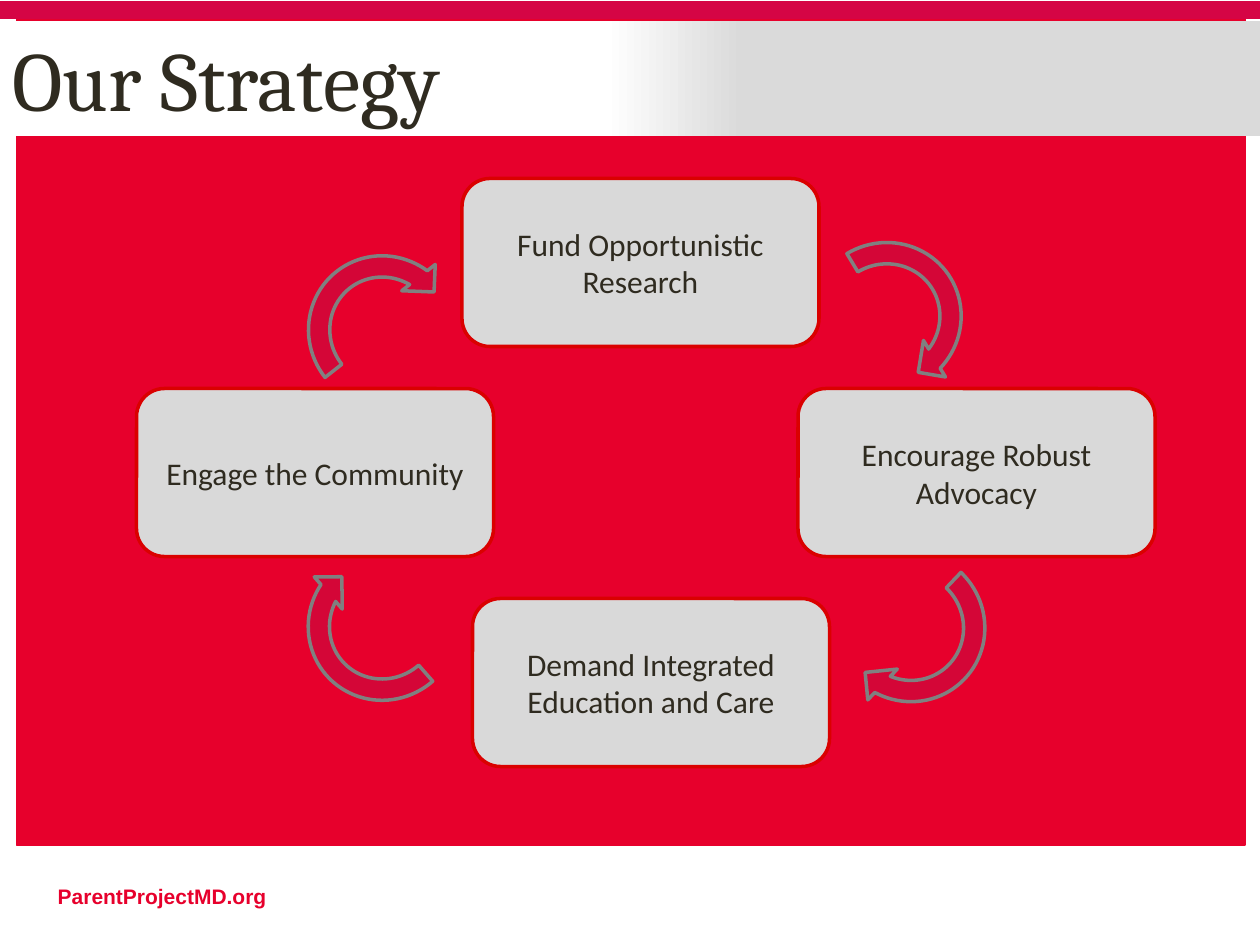
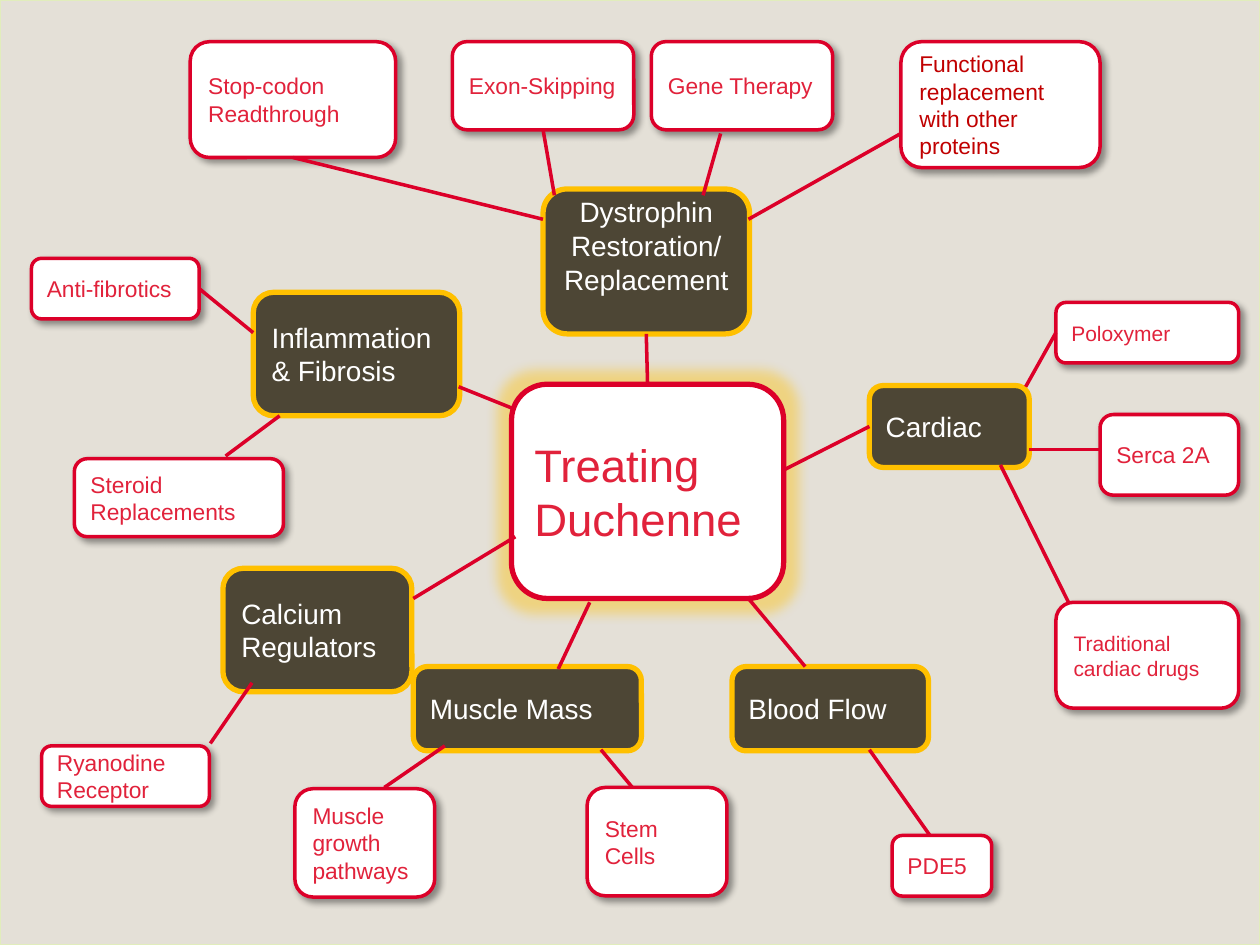
from dataclasses import dataclass

from lxml import etree
from pptx import Presentation
from pptx.dml.color import RGBColor
from pptx.enum.shapes import MSO_CONNECTOR, MSO_SHAPE
from pptx.enum.text import MSO_ANCHOR, PP_ALIGN
from pptx.oxml.ns import qn
from pptx.util import Pt

RECT = MSO_SHAPE.RECTANGLE
CARD = MSO_SHAPE.ROUNDED_RECTANGLE
NODE = MSO_SHAPE.FLOWCHART_ALTERNATE_PROCESS
ARROW = MSO_SHAPE.CIRCULAR_ARROW
STRAIGHT = MSO_CONNECTOR.STRAIGHT
TOP, MIDDLE = MSO_ANCHOR.TOP, MSO_ANCHOR.MIDDLE
LEFT, CENTER = PP_ALIGN.LEFT, PP_ALIGN.CENTER
SIDE_TOP, SIDE_LEFT, SIDE_BOTTOM, SIDE_RIGHT = range(4)


@dataclass(frozen=True)
class Theme:
    white: str = "FFFFFF"
    ink: str = "2F2B20"
    red: str = "E7002C"
    stripe: str = "D50545"
    band_end: str = "DADADA"
    card: str = "D9D9D9"
    card_line: str = "DA0000"
    arrow: str = "D40637"
    arrow_line: str = "808080"
    sand: str = "E4E0D7"
    sand_line: str = "E1EDBC"
    crimson: str = "DC0029"
    leaf_text: str = "E1223B"
    deep_red: str = "C00000"
    bark: str = "4D4635"
    gold: str = "FFC000"
    black: str = "000000"
    title_font: str = "Cambria"
    card_font: str = "Calibri"
    body_font: str = "Arial"
    title_size: int = 48
    hub_size: int = 26
    card_size: int = 18
    branch_size: int = 16
    leaf_size: int = 13
    small_size: int = 12


T = Theme()
SLIDE_BOX = (0, 0, 720, 540)

CARD_SIZE = (204, 96)
CARDS = [
    ("Fund Opportunistic Research", 186, 0),
    ("Encourage Robust Advocacy", 378, 120),
    ("Demand Integrated Education and Care", 192, 240),
    ("Engage the Community", 0, 120),
]
ARROW_SIZE = (97.4, 99.4)
ARROWS = [  # left, top, rotation
    (92.6, 37.7, 321.9),
    (92.6, 205.4, 229),
    (379.2, 29.8, 59),
    (392.9, 206.2, 133.8),
]

HUB = ("Treating Duchenne", 292.3, 219.6, 155.5, 122.4)
DYSTROPHIN = "Dystrophin Restoration/Replacement"
BRANCHES = [
    (DYSTROPHIN, 310.3, 108, 118, 82.8),
    ("Inflammation\v& Fibrosis", 144.7, 167, 118, 70.6),
    ("Cardiac", 496.8, 220.3, 91.4, 46.8),
    ("Muscle Mass", 236.2, 380.9, 130.3, 48.2),
    ("Blood Flow", 418.3, 380.9, 112.3, 48.2),
    ("Calcium Regulators", 127.4, 324.7, 108, 70.6),
]
FUNCTIONAL = "Functional replacement with other proteins"
LEAVES = [
    ("Stop-codon Readthrough", 108.7, 23.8, 117.4, 66.2),
    ("Exon-Skipping", 258.5, 23.8, 103.7, 50.4),
    ("Gene Therapy", 372.2, 23.8, 103.7, 50.4),
    (FUNCTIONAL, 514.8, 23.8, 113.8, 72),
    ("Poloxymer", 603.4, 172.8, 104.4, 34.6),
    ("Serca 2A", 628.6, 236.9, 79.2, 46.1),
    ("Traditional cardiac drugs", 603.4, 344.2, 104.4, 60.5),
    ("PDE5", 509.8, 477.4, 56.9, 34.6),
    ("Muscle growth pathways", 168.5, 450.7, 79.9, 61.9),
    ("Stem Cells", 335.5, 450, 79.9, 61.9),
    ("Anti-fibrotics", 18, 147.6, 95.8, 34.6),
    ("Steroid Replacements", 42.5, 262.1, 119.5, 44.6),
    ("Ryanodine Receptor", 23.8, 426.2, 95.8, 34.6),
]
SMALL_LEAVES = {"Poloxymer", "Traditional cardiac drugs"}
LINKS = [  # each end is a point, or a node and one of its sides
    ((DYSTROPHIN, SIDE_BOTTOM), (HUB[0], SIDE_TOP)),
    (("Cardiac", SIDE_LEFT), (447.8, 268.6)),
    ((427.7, 342), (460.1, 380.9)),
    ((337, 344.2), (319, 382.3)),
    ((294.5, 234), (262.1, 221)),
    ((294.5, 306.7), (236.2, 342)),
    (("Anti-fibrotics", SIDE_RIGHT), (144.7, 190.1)),
    (("Stop-codon Readthrough", SIDE_BOTTOM), (310.3, 125.3)),
    (("Exon-Skipping", SIDE_BOTTOM), (316.8, 111.6)),
    ((411.8, 76.3), (401.8, 111.6)),
    ((514.8, 76.3), (427.7, 125.3)),
    (("Poloxymer", SIDE_LEFT), (586.1, 221)),
    ((628.6, 257), (588.2, 257)),
    ((610.6, 344.2), (571.7, 265.7)),
    ((531.4, 477.4), (496.8, 428.4)),
    ((128.9, 260.6), (159.8, 237.6)),
    ((361.4, 450), (343.4, 428.4)),
    ((219.6, 450), (254.2, 426.2)),
    ((120.2, 424.8), (144, 390.2)),
]


def rgb(color):
    return RGBColor.from_string(color)


def set_background(s, color):
    fill = s.background.fill
    fill.solid()
    fill.fore_color.rgb = rgb(color)


def add_box(s, kind, box, fill=None, line=None, width=1):
    sp = s.shapes.add_shape(kind, *(Pt(v) for v in box))
    sp.shadow.inherit = False
    if fill:
        sp.fill.solid()
        sp.fill.fore_color.rgb = rgb(fill)
    if line:
        sp.line.color.rgb = rgb(line)
        sp.line.width = Pt(width)
    else:
        sp.line.fill.background()
    return sp


def write(sp, text, font, size, color, align=LEFT, anchor=MIDDLE, bold=False):
    tf = sp.text_frame
    tf.word_wrap = True
    tf.vertical_anchor = anchor
    tf.text = text
    p = tf.paragraphs[0]
    p.alignment = align
    for r in p.runs:
        r.font.name, r.font.size, r.font.bold = font, Pt(size), bold
        r.font.color.rgb = rgb(color)


def add_effect(sp, tag, color, alpha, **attrs):
    """Put one effect, such as a:glow, in the shape's empty effect list."""
    effects = sp._element.spPr.find(qn("a:effectLst"))
    effect = etree.SubElement(effects, qn(tag), {k: str(v) for k, v in attrs.items()})
    clr = etree.SubElement(effect, qn("a:srgbClr"), val=color)
    etree.SubElement(clr, qn("a:alpha"), val=str(alpha * 1000))


def add_line(s, start, end, color, width):
    cx = s.shapes.add_connector(STRAIGHT, *(Pt(v) for v in (*start, *end)))
    cx.line.color.rgb = rgb(color)
    cx.line.width = Pt(width)
    etree.SubElement(cx._element.spPr, qn("a:effectLst"))
    return cx


def add_title_band(s, box, title):
    x, y, w, h = box
    add_line(s, (x, y + 5.8), (x + w, y + 5.8), T.stripe, 10)
    sp = add_box(s, RECT, (x, y + 12, w, h - 12))
    sp.fill.gradient()
    sp.fill.gradient_angle = 0
    for stop, color, position in zip(sp.fill.gradient_stops,
                                     (T.white, T.band_end), (0.48, 0.59)):
        stop.color.rgb = rgb(color)
        stop.position = position
    write(sp, title, T.title_font, T.title_size, T.ink, anchor=TOP)


def add_footer(s, box, text):
    sp = s.shapes.add_textbox(*(Pt(v) for v in box))
    write(sp, text, T.body_font, T.small_size, T.red, anchor=TOP, bold=True)


def add_cycle(s, box):
    x, y = box[:2]
    for text, dx, dy in CARDS:
        sp = add_box(s, CARD, (x + dx, y + dy, *CARD_SIZE), T.card, T.card_line, 2)
        write(sp, text, T.card_font, T.card_size, T.ink, CENTER)
    for dx, dy, angle in ARROWS:
        sp = add_box(s, ARROW, (x + dx, y + dy, *ARROW_SIZE),
                     T.arrow, T.arrow_line, 2)
        sp.rotation = angle


def add_node(s, origin, node, fill, line, width, size, color, align=LEFT):
    text, dx, dy, w, h = node
    sp = add_box(s, NODE, (origin[0] + dx, origin[1] + dy, w, h), fill, line, width)
    write(sp, text, T.body_font, size, color, align)
    return sp


def add_link(s, origin, ends, nodes):
    joined = [isinstance(end[0], str) for end in ends]
    points = [(0, 0) if j else (origin[0] + end[0], origin[1] + end[1])
              for j, end in zip(joined, ends)]
    cx = add_line(s, *points, T.crimson, 2)
    for j, end, connect in zip(joined, ends, (cx.begin_connect, cx.end_connect)):
        if j:
            connect(nodes[end[0]], end[1])


def add_mind_map(s, box):
    origin = box[:2]
    hub = add_node(s, origin, HUB, T.white, T.crimson, 3, T.hub_size, T.leaf_text)
    add_effect(hub, "a:glow", T.gold, 40, rad=Pt(14))
    nodes = {HUB[0]: hub}
    for node in BRANCHES:
        align = CENTER if node[0] == DYSTROPHIN else LEFT
        nodes[node[0]] = add_node(s, origin, node, T.bark, T.gold, 3,
                                  T.branch_size, T.white, align)
    nodes[DYSTROPHIN].text_frame.margin_bottom = Pt(22)
    for node in LEAVES:
        size = T.small_size if node[0] in SMALL_LEAVES else T.leaf_size
        color = T.deep_red if node[0] == FUNCTIONAL else T.leaf_text
        sp = add_node(s, origin, node, T.white, T.crimson, 2, size, color)
        add_effect(sp, "a:outerShdw", T.black, 40, blurRad=Pt(4), dist=Pt(3),
                   dir=45 * 60000, algn="tl", rotWithShape=0)
        nodes[node[0]] = sp
    for ends in LINKS:
        add_link(s, origin, ends, nodes)


def build_strategy(s):
    set_background(s, T.white)
    add_box(s, RECT, (9.4, 8.6, 702, 474.5), T.red, T.red)
    add_footer(s, (25.9, 501.1, 373.7, 21.6), "ParentProjectMD.org")
    add_title_band(s, (0, 0, 720, 77.5), "Our Strategy")
    add_cycle(s, (78, 102, 582, 336))


def build_treatments(s):
    set_background(s, T.sand)
    add_box(s, RECT, SLIDE_BOX, T.sand, T.sand_line)
    add_mind_map(s, SLIDE_BOX)


def main():
    prs = Presentation()
    prs.slide_width, prs.slide_height = Pt(720), Pt(540)
    for build in (build_strategy, build_treatments):
        build(prs.slides.add_slide(prs.slide_layouts[6]))
    prs.save("out.pptx")


if __name__ == "__main__":
    main()
